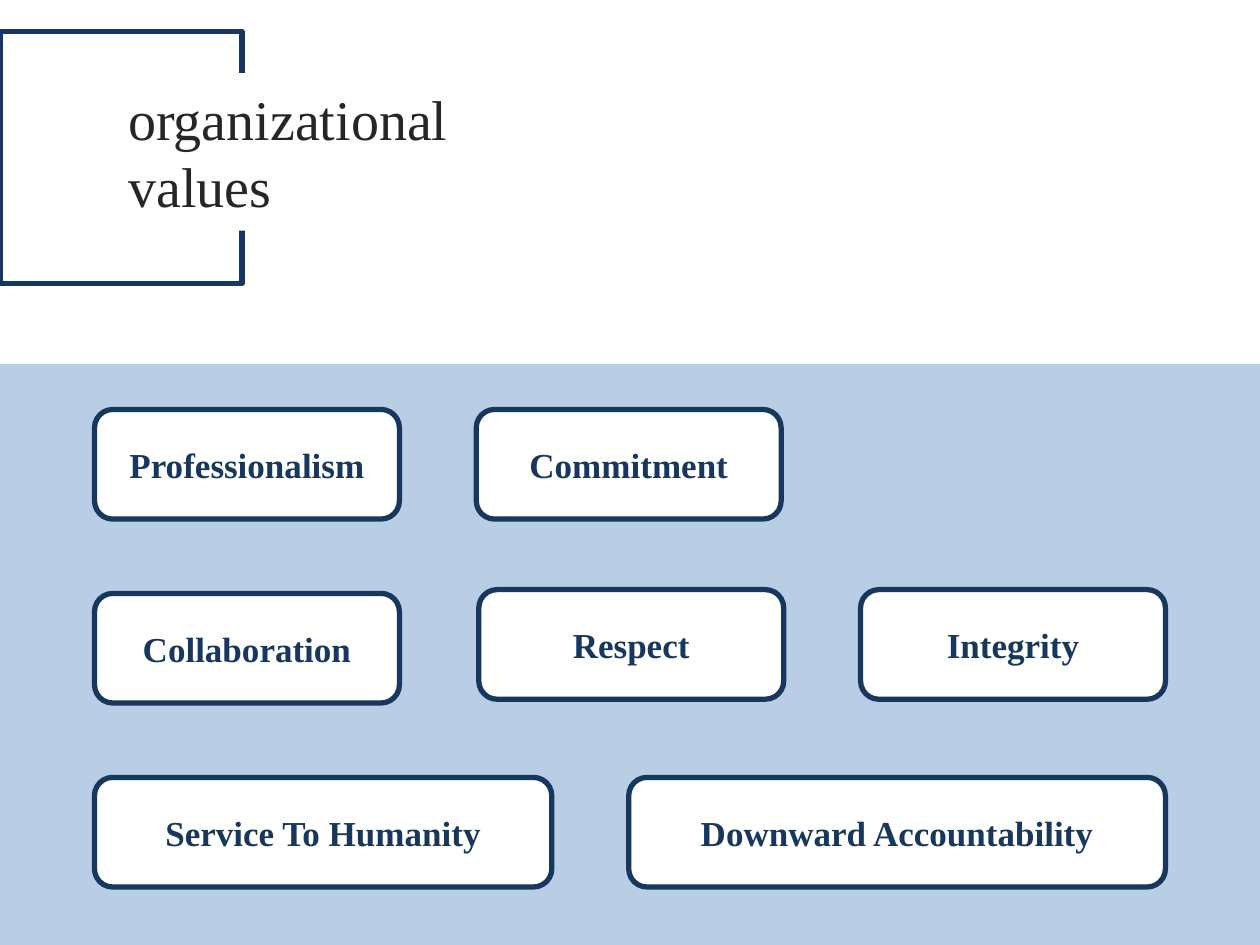
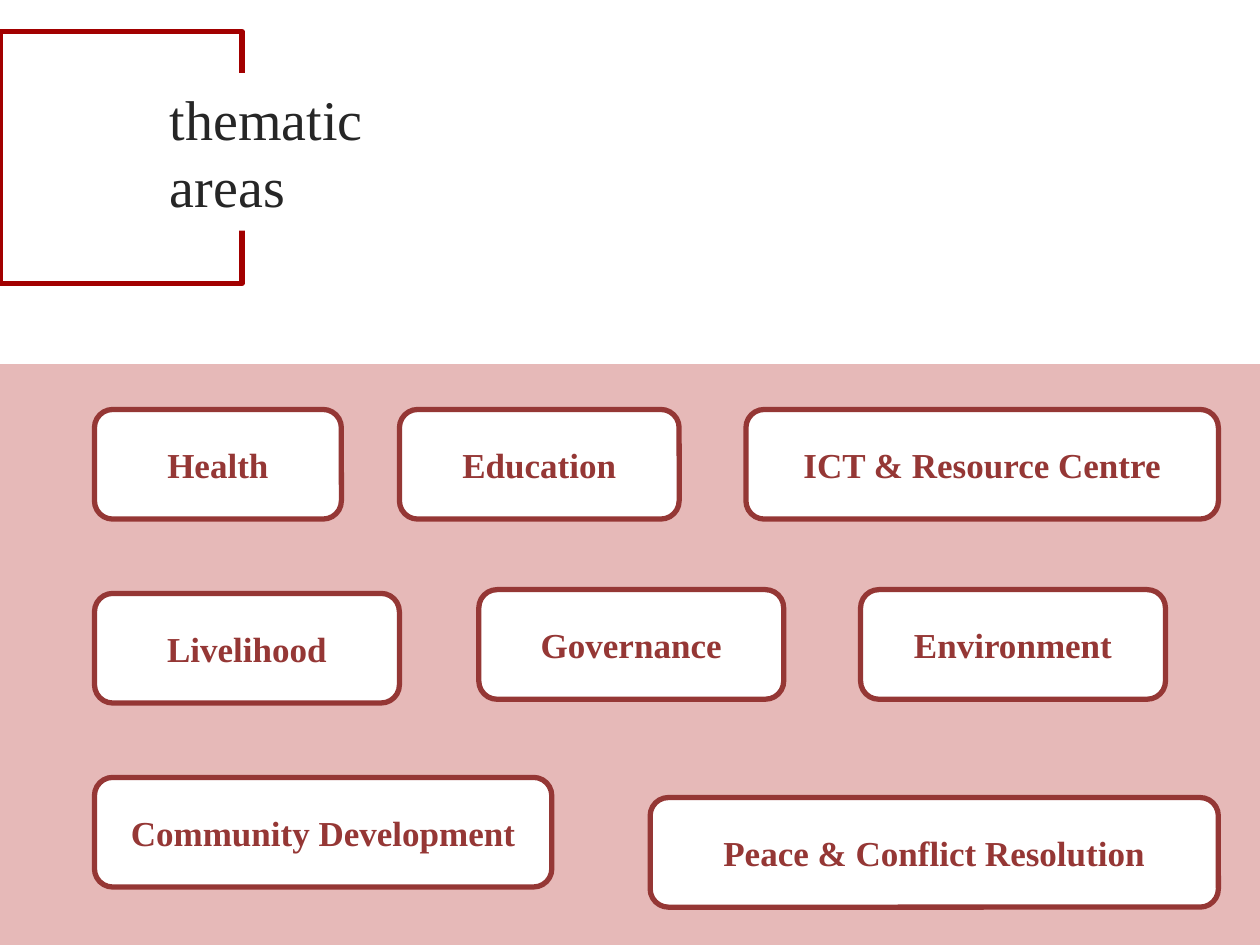
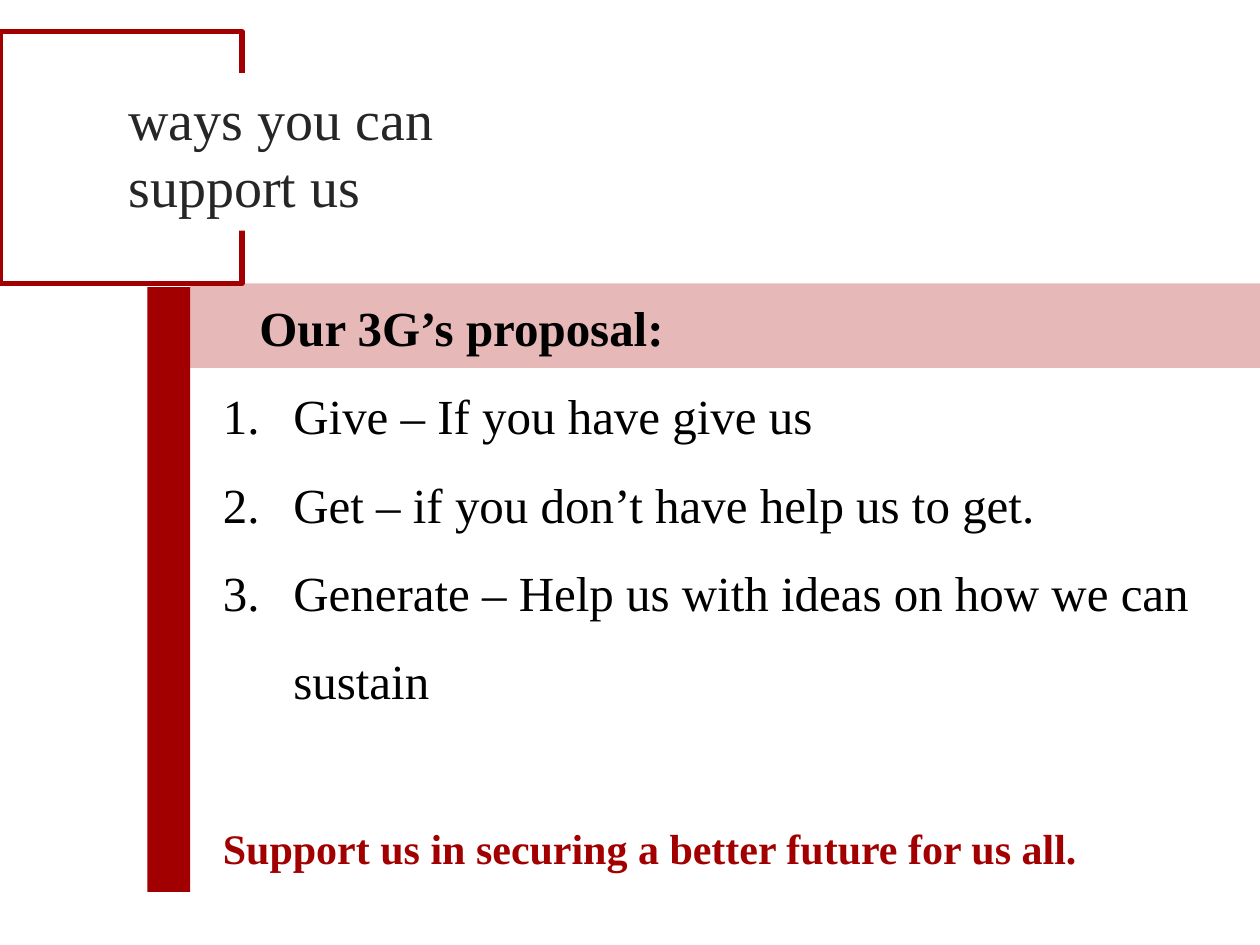
import pptx
import pptx.dml.color
import pptx.enum.shapes
import pptx.enum.text
import pptx.oxml.ns
import pptx.util
from lxml import etree

COLOURS = {
    "white": "FFFFFF", "black": "000000", "title": "262626",
    "navy": "17375E", "sky": "B9CDE5",
    "crimson": "A20000", "brick": "953735", "rose": "E6B9B8",
}
FONT = "Times New Roman"
WIDTH, HEIGHT = 10, 7.5
FRAME = (0, 0.25, 1.92, 2)
TITLE_TOP, TITLE_WIDTH, TITLE_HEIGHT = 0.58, 2.92, 1.25
PANEL_TOP = 2.89
ROW_TOP, ROW_STEP, CARD_HEIGHT = 3.25, 1.46, 0.87
NUMBER_INDENT = 0.56
RECT = pptx.enum.shapes.MSO_SHAPE.RECTANGLE
ROUNDED = pptx.enum.shapes.MSO_SHAPE.ROUNDED_RECTANGLE
CENTER = pptx.enum.text.PP_ALIGN.CENTER
LEFT = pptx.enum.text.PP_ALIGN.LEFT

# Each card: label, left, width, shift from its row's top
CARD_SLIDES = [
    {
        "title": ["organizational", "values"], "title_left": 0.92,
        "frame": "navy", "panel": "sky", "card": "navy",
        "rows": [
            [("Professionalism", 0.75, 2.42, 0), ("Commitment", 3.78, 2.42, 0)],
            [("Collaboration", 0.75, 2.42, 0), ("Respect", 3.8, 2.42, -0.03),
             ("Integrity", 6.83, 2.42, -0.03)],
            [("Service To Humanity", 0.75, 3.63, 0),
             ("Downward Accountability", 4.99, 4.26, 0)],
        ],
    },
    {
        "title": ["thematic", "areas"], "title_left": 1.25,
        "frame": "crimson", "panel": "rose", "card": "brick",
        "rows": [
            [("Health", 0.75, 1.96, 0), ("Education", 3.17, 2.22, 0),
             ("ICT & Resource Centre", 5.92, 3.75, 0)],
            [("Livelihood", 0.75, 2.42, 0), ("Governance", 3.8, 2.42, -0.03),
             ("Environment", 6.83, 2.42, -0.03)],
            [("Community Development", 0.75, 3.63, 0),
             ("Peace & Conflict Resolution", 5.16, 4.51, 0.16)],
        ],
    },
]
SUPPORT_TITLE = ["ways you can support us"]
PROPOSAL = "Our 3G’s proposal:"
WAYS = [
    "Give – If you have give us",
    "Get – if you don’t have help us to get.",
    "Generate – Help us with ideas on how we can sustain",
]
APPEAL = "Support us in securing a better future for us all."


def rgb(name):
    return pptx.dml.color.RGBColor.from_string(COLOURS[name])


def inches(box):
    return [pptx.util.Inches(length) for length in box]


def add_block(slide, kind, box, fill=None, line=None):
    block = slide.shapes.add_shape(kind, *inches(box))
    block.shadow.inherit = False
    if fill:
        block.fill.solid()
        block.fill.fore_color.rgb = rgb(fill)
    else:
        block.fill.background()
    if line:
        block.line.color.rgb = rgb(line)
        block.line.width = pptx.util.Pt(3)
    else:
        block.line.fill.background()
    return block


def write(paragraph, text, size, colour, bold=False, **layout):
    run = paragraph.add_run()
    run.text = text
    run.font.color.rgb = rgb(colour)
    for name, value in {"name": FONT, "size": pptx.util.Pt(size), "bold": bold}.items():
        setattr(run.font, name, value)
    for name, value in layout.items():
        setattr(paragraph, name, value)


def indent(paragraph, margin, first=0, numbered=False):
    """Set the left margin and first-line offset in inches, with a number if asked."""
    properties = paragraph._p.get_or_add_pPr()
    properties.set("marL", str(pptx.util.Inches(margin)))
    properties.set("indent", str(pptx.util.Inches(first)))
    if numbered:
        number = etree.SubElement(properties, pptx.oxml.ns.qn("a:buAutoNum"))
        number.set("type", "arabicPeriod")


def next_paragraph(frame, index):
    return frame.add_paragraph() if index else frame.paragraphs[0]


def add_heading(slide, lines, left, frame_colour):
    add_block(slide, RECT, FRAME, line=frame_colour)
    heading = add_block(slide, RECT, (left, TITLE_TOP, TITLE_WIDTH, TITLE_HEIGHT), "white")
    for index, line in enumerate(lines):
        write(next_paragraph(heading.text_frame, index), line, 32, "title", alignment=LEFT)


def add_card_slide(slide, content):
    panel = (0, PANEL_TOP, WIDTH, HEIGHT - PANEL_TOP)
    add_block(slide, RECT, panel, content["panel"])
    for row, cards in enumerate(content["rows"]):
        for label, left, width, shift in cards:
            box = (left, ROW_TOP + row * ROW_STEP + shift, width, CARD_HEIGHT)
            card = add_block(slide, ROUNDED, box, "white", content["card"])
            write(card.text_frame.paragraphs[0], label, 20, content["card"], True,
                  alignment=CENTER)
    add_heading(slide, content["title"], content["title_left"], content["frame"])


def add_support_slide(slide):
    add_block(slide, RECT, (1.51, 2.25, 8.49, 0.67), "rose")
    add_block(slide, RECT, (1.17, 2.28, 0.34, 4.8), "crimson")
    add_heading(slide, SUPPORT_TITLE, 0.92, "crimson")

    proposal = slide.shapes.add_textbox(*inches((1.67, 2.08, 8.25, 5.05))).text_frame
    proposal.word_wrap = True
    write(proposal.paragraphs[0], PROPOSAL, 28, "black", True, line_spacing=1.5)
    indent(proposal.paragraphs[0], 0.29)
    for way in WAYS:
        paragraph = proposal.add_paragraph()
        write(paragraph, way, 28, "black", line_spacing=1.5)
        indent(paragraph, NUMBER_INDENT, -NUMBER_INDENT, numbered=True)
    write(proposal.add_paragraph(), APPEAL, 24, "crimson", True,
          line_spacing=1.5, space_before=pptx.util.Pt(50))


def main():
    deck = pptx.Presentation()
    deck.slide_width, deck.slide_height = inches((WIDTH, HEIGHT))
    blank = deck.slide_layouts[6]
    for content in CARD_SLIDES:
        add_card_slide(deck.slides.add_slide(blank), content)
    add_support_slide(deck.slides.add_slide(blank))
    deck.save("out.pptx")


if __name__ == "__main__":
    main()
